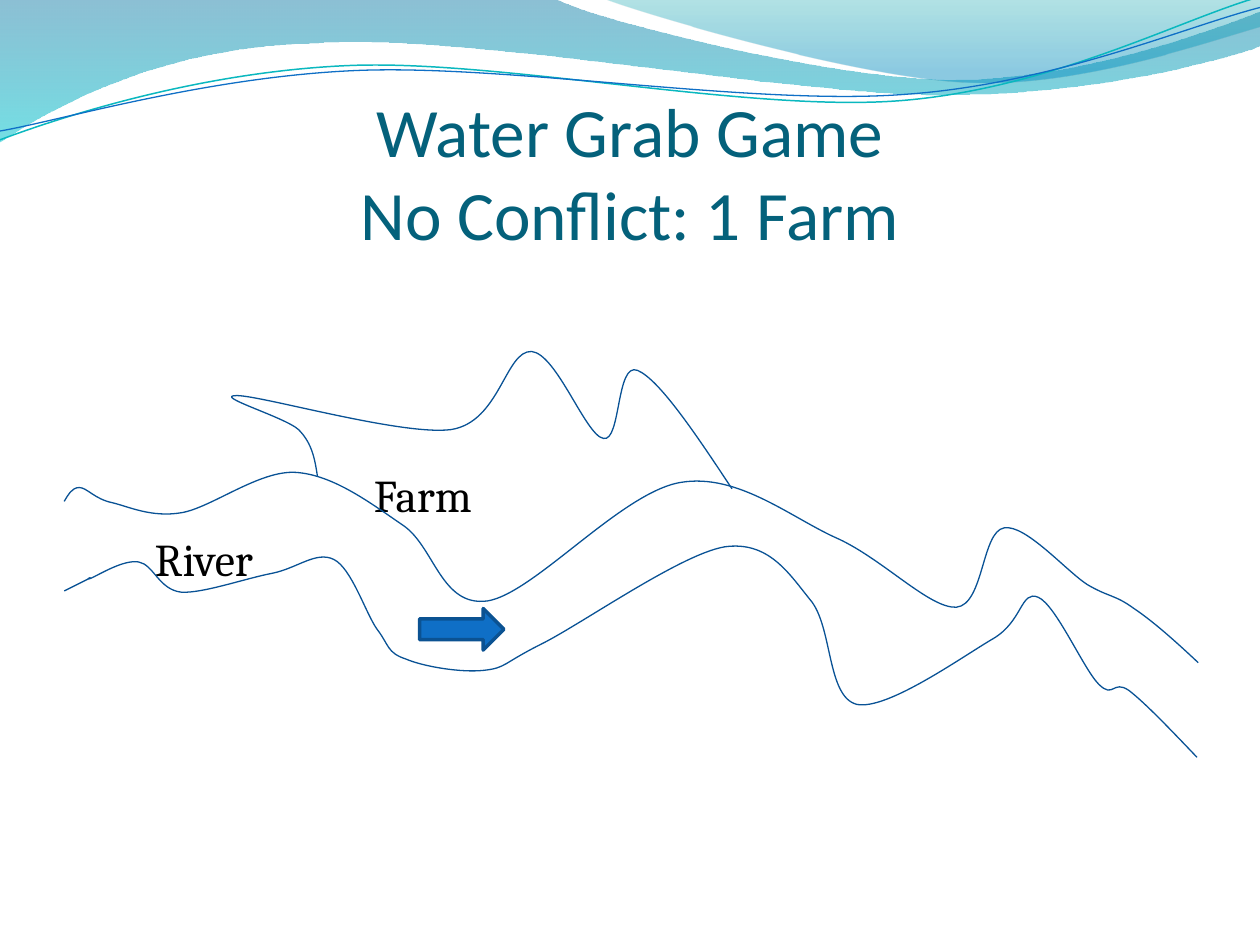
from math import cos, radians, sin

from lxml.etree import SubElement
from pptx import Presentation
from pptx.dml.color import RGBColor
from pptx.enum.shapes import MSO_SHAPE
from pptx.enum.text import MSO_ANCHOR, MSO_AUTO_SIZE, PP_ALIGN
from pptx.oxml.ns import qn
from pptx.util import Inches, Pt

COLORS = {
    "title": "04617B", "text": "000000", "bank": "095295",
    "arrow": "0F6FC6", "arrow_line": "0B5292",
    "teal_line": "0AB8BF", "blue_line": "0F6FC6",
}

# An outline is a start point, then lines (x, y) and curves (x1, y1, x2, y2, x, y)
WAVES = [
    # outline, gradient stops as (position, colour, opacity)
    ([(0, 0), (4.4, -0.01), (4.76, 0.17, 6.64, 0.63, 7.58, 0.63),
      (8.53, 0.63, 9.58, 0.26, 10, 0.09), (10.01, 0.36),
      (9.83, 0.44, 8.7, 0.76, 7.46, 0.75), (6.22, 0.75, 3.82, 0.28, 2.57, 0.34),
      (1.29, 0.36, 0.46, 0.83, -0.01, 1.13)],
     [(0, "0074A1", 45), (1, "00C6CF", 55)]),
    ([(4.79, -0.01), (5.09, 0.11, 6.82, 0.62, 7.69, 0.65),
      (8.56, 0.69, 9.61, 0.32, 10, 0.21), (10, 0)],
     [(0, "00A1A9", 30), (0.8, "008BBF", 45)]),
]
WAVE_LINES = [
    # outline, centre of rotation, colour, width
    ([(0, 1.11), (0.48, 0.93, 1.58, 0.57, 2.77, 0.52),
      (3.95, 0.47, 5.93, 0.89, 7.13, 0.8), (8.33, 0.71, 9.38, 0.15, 9.98, -0.02)],
     (4.99, 0.57), "teal_line", 0.85),
    ([(0, 1.04), (0.47, 0.96, 1.64, 0.61, 2.83, 0.56),
      (4.03, 0.51, 5.97, 0.84, 7.17, 0.75), (8.36, 0.67, 9.41, 0.21, 10, 0.06)],
     (5, 0.59), "blue_line", 0.75),
]
WAVE_ROTATION = 357.3

UPPER_BANK = [
    (0.51, 3.98), (0.54, 3.93, 0.57, 3.87, 0.63, 3.87),
    (0.69, 3.87, 0.75, 3.96, 0.89, 3.99), (1.02, 4.02, 1.2, 4.11, 1.44, 4.07),
    (1.68, 4.03, 2.06, 3.73, 2.35, 3.75), (2.65, 3.77, 2.95, 4, 3.2, 4.17),
    (3.45, 4.34, 3.5, 4.82, 3.87, 4.77), (4.24, 4.71, 4.93, 3.91, 5.4, 3.83),
    (5.86, 3.75, 6.29, 4.12, 6.66, 4.28), (7.02, 4.45, 7.38, 4.83, 7.59, 4.82),
    (7.81, 4.8, 7.79, 4.22, 7.97, 4.19), (8.14, 4.16, 8.46, 4.53, 8.63, 4.64),
    (8.8, 4.74, 8.85, 4.72, 9, 4.83), (9.15, 4.93, 9.33, 5.09, 9.51, 5.26),
]
LOWER_BANK = [
    (0.51, 4.69), (0.71, 4.59), (0.74, 4.57, 0.66, 4.61, 0.72, 4.59),
    (0.79, 4.56, 0.98, 4.44, 1.1, 4.46), (1.22, 4.48, 1.26, 4.68, 1.44, 4.7),
    (1.61, 4.71, 1.95, 4.59, 2.16, 4.55), (2.36, 4.51, 2.51, 4.37, 2.65, 4.44),
    (2.79, 4.51, 2.9, 4.86, 2.99, 4.99), (3.09, 5.12, 3.07, 5.18, 3.22, 5.23),
    (3.36, 5.29, 3.66, 5.34, 3.84, 5.32), (4.02, 5.3, 3.98, 5.27, 4.3, 5.11),
    (4.62, 4.95, 5.4, 4.4, 5.75, 4.34), (6.1, 4.29, 6.26, 4.55, 6.43, 4.76),
    (6.61, 4.97, 6.56, 5.53, 6.8, 5.59), (7.04, 5.64, 7.64, 5.21, 7.88, 5.07),
    (8.12, 4.93, 8.1, 4.68, 8.24, 4.74), (8.38, 4.8, 8.6, 5.31, 8.72, 5.43),
    (8.84, 5.55, 8.83, 5.39, 8.96, 5.48), (9.09, 5.58, 9.29, 5.79, 9.5, 6.01),
]
FARM_BORDER = [
    (2.52, 3.78), (2.5, 3.65, 2.48, 3.52, 2.37, 3.41),
    (2.26, 3.31, 1.68, 3.14, 1.88, 3.14), (2.08, 3.14, 3.19, 3.46, 3.58, 3.41),
    (3.97, 3.35, 4.01, 2.78, 4.22, 2.79), (4.42, 2.81, 4.65, 3.46, 4.79, 3.48),
    (4.93, 3.51, 4.89, 2.87, 5.06, 2.94), (5.23, 3.01, 5.52, 3.44, 5.81, 3.88),
]
LABELS = [("Farm", 2.37), ("River", 0.63)]  # text, left indent


def rgb(name):
    return RGBColor.from_string(COLORS[name])


def pairs(segment):
    return list(zip(segment[::2], segment[1::2]))


def rotate(outline, centre, degrees):
    cx, cy = centre
    c, s = cos(radians(degrees)), sin(radians(degrees))
    return [tuple(v for x, y in pairs(segment)
                  for v in (cx + (x - cx) * c - (y - cy) * s,
                            cy + (x - cx) * s + (y - cy) * c))
            for segment in outline]


def add_outline(slide, outline, close=False):
    points = [(Inches(x), Inches(y)) for seg in outline for x, y in pairs(seg)]
    builder = slide.shapes.build_freeform(*points[0])
    builder.add_line_segments(points[1:], close=close)
    sp = builder.convert_to_shape()
    sp.shadow.inherit = False
    # Merge each three steps of a curve into one Bezier segment
    steps = iter(sp.element.findall(".//" + qn("a:lnTo")))
    for segment in outline[1:]:
        group = [next(steps) for _ in pairs(segment)]
        if len(group) == 3:
            curve = group[0].makeelement(qn("a:cubicBezTo"))
            group[0].addprevious(curve)
            for step in group:
                curve.append(step[0])
                step.getparent().remove(step)
    return sp


def add_curve(slide, outline, color, width):
    sp = add_outline(slide, outline)
    sp.fill.background()
    sp.line.color.rgb = rgb(color)
    sp.line.width = Pt(width)
    return sp


def add_wave(slide, outline, stops):
    sp = add_outline(slide, outline, close=True)
    sp.line.fill.background()
    sp.fill.gradient()
    sp.fill.gradient_angle = 270
    for stop, (position, color, _) in zip(sp.fill.gradient_stops, stops):
        stop.position = position
        stop.color.rgb = RGBColor.from_string(color)
    clrs = sp.element.findall(".//" + qn("a:gs") + "/" + qn("a:srgbClr"))
    for clr, (_, _, opacity) in zip(clrs, stops):
        SubElement(clr, qn("a:alpha"), val=str(opacity * 1000))


def set_title(slide, text):
    title = slide.shapes.title
    title.left, title.top = Inches(0.5), Inches(0.77)
    title.width, title.height = Inches(9), Inches(1.25)
    tf = title.text_frame
    tf.text = text
    tf.auto_size = MSO_AUTO_SIZE.NONE
    tf.vertical_anchor = MSO_ANCHOR.BOTTOM
    tf.margin_left = tf.margin_right = tf.margin_bottom = 0
    p = tf.paragraphs[0]
    p.alignment = PP_ALIGN.CENTER
    p.font.name, p.font.size = "Calibri", Pt(39.6)
    p.font.color.rgb = rgb("title")
    slide.shapes.element.append(title.element)  # in front of the waves


def add_labels(slide):
    box = slide.shapes.add_textbox(Inches(0.5), Inches(2.12), Inches(9), Inches(4.8))
    tf = box.text_frame
    tf.word_wrap = True
    tf.margin_top = Inches(1.59)
    for i, (text, indent) in enumerate(LABELS):
        p = tf.add_paragraph() if i else tf.paragraphs[0]
        p.text = text
        p.font.name, p.font.size = "Cambria", Pt(26)
        p.font.color.rgb = rgb("text")
        p.space_before = Pt(5.2 if i else 0)
        p._p.get_or_add_pPr().set("marL", str(Inches(indent)))


def add_flow_arrow(slide):
    sp = slide.shapes.add_shape(MSO_SHAPE.RIGHT_ARROW, Inches(3.33), Inches(4.83),
                                Inches(0.67), Inches(0.33))
    sp.shadow.inherit = False
    sp.fill.solid()
    sp.fill.fore_color.rgb = rgb("arrow")
    sp.line.color.rgb = rgb("arrow_line")
    sp.line.width = Pt(2)


def main():
    prs = Presentation()
    prs.slide_width, prs.slide_height = Inches(10), Inches(7.5)
    slide = prs.slides.add_slide(prs.slide_layouts[5])
    # Header waves
    for outline, stops in WAVES:
        add_wave(slide, outline, stops)
    for outline, centre, color, width in WAVE_LINES:
        level = rotate(outline, centre, -WAVE_ROTATION)
        add_curve(slide, level, color, width).rotation = WAVE_ROTATION
    # Title and labels
    set_title(slide, "Water Grab Game\vNo Conflict: 1 Farm")
    add_labels(slide)
    # River, farm and flow direction
    for outline in (UPPER_BANK, LOWER_BANK, FARM_BORDER):
        add_curve(slide, outline, "bank", 0.75)
    add_flow_arrow(slide)
    prs.save("out.pptx")


if __name__ == "__main__":
    main()
